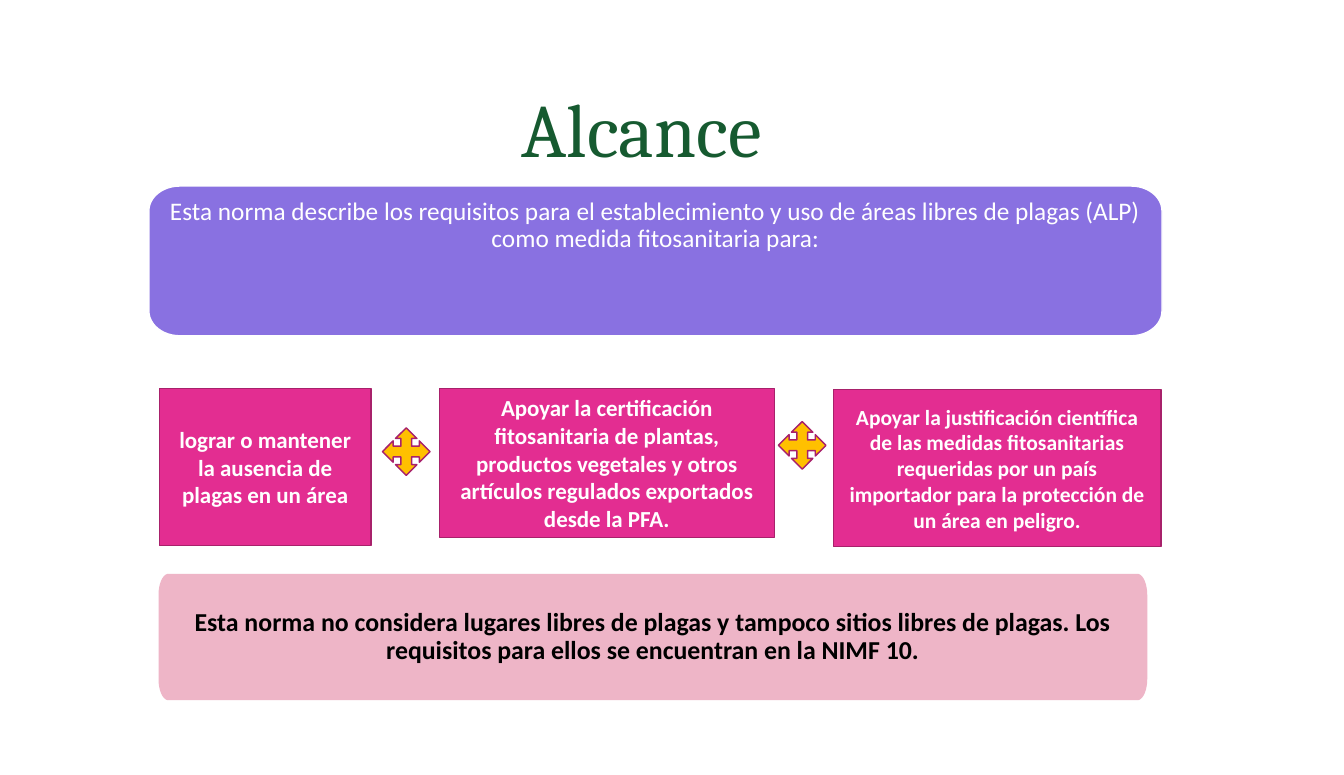
import math
from dataclasses import dataclass

import pptx
import pptx.dml.color
import pptx.enum.shapes
import pptx.enum.text
import pptx.util

Inches = pptx.util.Inches
Shape = pptx.enum.shapes.MSO_SHAPE
Anchor = pptx.enum.text.MSO_ANCHOR


@dataclass(frozen=True)
class Theme:
    """Colours, fonts and type sizes of the slide."""
    green: str = "165A30"
    violet: str = "8971E1"
    rose: str = "EEB5C7"
    pink: str = "E32D91"
    plum: str = "A8216B"
    gold: str = "FFC000"
    white: str = "FFFFFF"
    black: str = "000000"
    serif: str = "Cambria"
    sans: str = "Calibri"
    title: float = 52.6
    intro: float = 17.6
    note: float = 18
    goal: float = 16
    small: float = 15


THEME = Theme()


def tint(code):
    """Turn a hex code into a colour."""
    return pptx.dml.color.RGBColor.from_string(code)


def paint(shape, fill, line):
    """Give a shape a flat fill and a thin outline."""
    shape.shadow.inherit = False
    shape.fill.solid()
    shape.fill.fore_color.rgb = tint(fill)
    shape.line.color.rgb = tint(line)
    shape.line.width = pptx.util.Pt(1)


def write(shape, text, size, color, face=THEME.sans, bold=False,
          anchor=Anchor.MIDDLE, inset=None, lead=1.0):
    """Set one centred paragraph in a shape."""
    frame = shape.text_frame
    frame.word_wrap = True
    frame.vertical_anchor = anchor
    if inset is not None:
        frame.margin_left = frame.margin_right = Inches(inset)
        frame.margin_top = frame.margin_bottom = Inches(inset)
    para = frame.paragraphs[0]
    para.text = text
    para.alignment = pptx.enum.text.PP_ALIGN.CENTER
    para.line_spacing = lead
    font = para.font
    font.name, font.size, font.bold = face, pptx.util.Pt(size), bold
    font.color.rgb = tint(color)


def panel(slide, box, curve, fill, line):
    """Draw a box with elliptical corners of the given radii."""
    left, top, width, height = box
    wide, high = curve
    steps = 12
    points = []
    for turn in range(4):
        side = 1 if turn in (0, 3) else -1
        drop = 1 if turn in (0, 1) else -1
        mid_x = left + width / 2 + side * (width / 2 - wide)
        mid_y = top + height / 2 + drop * (height / 2 - high)
        for step in range(steps + 1):
            angle = (turn + step / steps) * math.pi / 2
            points.append((Inches(mid_x + wide * math.cos(angle)),
                           Inches(mid_y + high * math.sin(angle))))
    pen = slide.shapes.build_freeform(*points[0])
    pen.add_line_segments(points[1:], close=True)
    shape = pen.convert_to_shape()
    paint(shape, fill, line)
    return shape


def title(slide, box):
    """Place the slide title."""
    shape = slide.shapes.add_textbox(*map(Inches, box))
    write(shape, "Alcance", THEME.title, THEME.green, THEME.serif,
          anchor=Anchor.BOTTOM, lead=0.9)


def intro(slide, box):
    """Place the violet opening panel."""
    shape = panel(slide, box, (0.3, 0.24), THEME.violet, THEME.white)
    write(shape, "Esta norma describe los requisitos para el establecimiento y "
          "uso de áreas libres de plagas (ALP) como medida fitosanitaria para:",
          THEME.intro, THEME.white, anchor=Anchor.TOP, inset=0.12, lead=0.9)


def note(slide, box):
    """Place the rose closing panel."""
    shape = panel(slide, box, (0.09, 0.2), THEME.rose, THEME.rose)
    write(shape, "Esta norma no considera lugares libres de plagas y tampoco "
          "sitios libres de plagas. Los requisitos para ellos se encuentran "
          "en la NIMF 10.",
          THEME.note, THEME.black, bold=True, inset=0.07, lead=0.9)


def goal(slide, box, text, size):
    """Place one pink goal box."""
    shape = slide.shapes.add_shape(Shape.RECTANGLE, *map(Inches, box))
    paint(shape, THEME.pink, THEME.plum)
    write(shape, text, size, THEME.white, bold=True)


def goals(slide, box):
    """Place the three goals and the arrows between them."""
    left, top = box[:2]
    items = (
        (0, 0, 2.05, 1.52, THEME.goal,
         "lograr o mantener la ausencia de plagas en un área"),
        (2.71, 0, 3.24, 1.44, THEME.goal,
         "Apoyar la certificación fitosanitaria de plantas, productos "
         "vegetales y otros artículos regulados exportados desde la PFA."),
        (6.52, 0.01, 3.17, 1.52, THEME.small,
         "Apoyar la justificación científica de las medidas fitosanitarias "
         "requeridas por un país importador para la protección de un área "
         "en peligro."),
    )
    for dx, dy, width, height, size, text in items:
        goal(slide, (left + dx, top + dy, width, height), text, size)
    for dx, dy in ((2.16, 0.38), (5.99, 0.32)):
        arrow = slide.shapes.add_shape(
            Shape.QUAD_ARROW, Inches(left + dx), Inches(top + dy),
            Inches(0.46), Inches(0.46))
        paint(arrow, THEME.gold, THEME.plum)


def main():
    """Build and save the slide."""
    deck = pptx.Presentation()
    deck.slide_width, deck.slide_height = Inches(13), Inches(7.5)
    slide = deck.slides.add_slide(deck.slide_layouts[6])
    title(slide, (2.06, 0.51, 8.29, 1.22))
    intro(slide, (1.44, 1.8, 9.8, 1.45))
    note(slide, (1.54, 5.56, 9.55, 1.21))
    goals(slide, (1.54, 3.76, 9.69, 1.53))
    deck.save("out.pptx")


if __name__ == "__main__":
    main()
